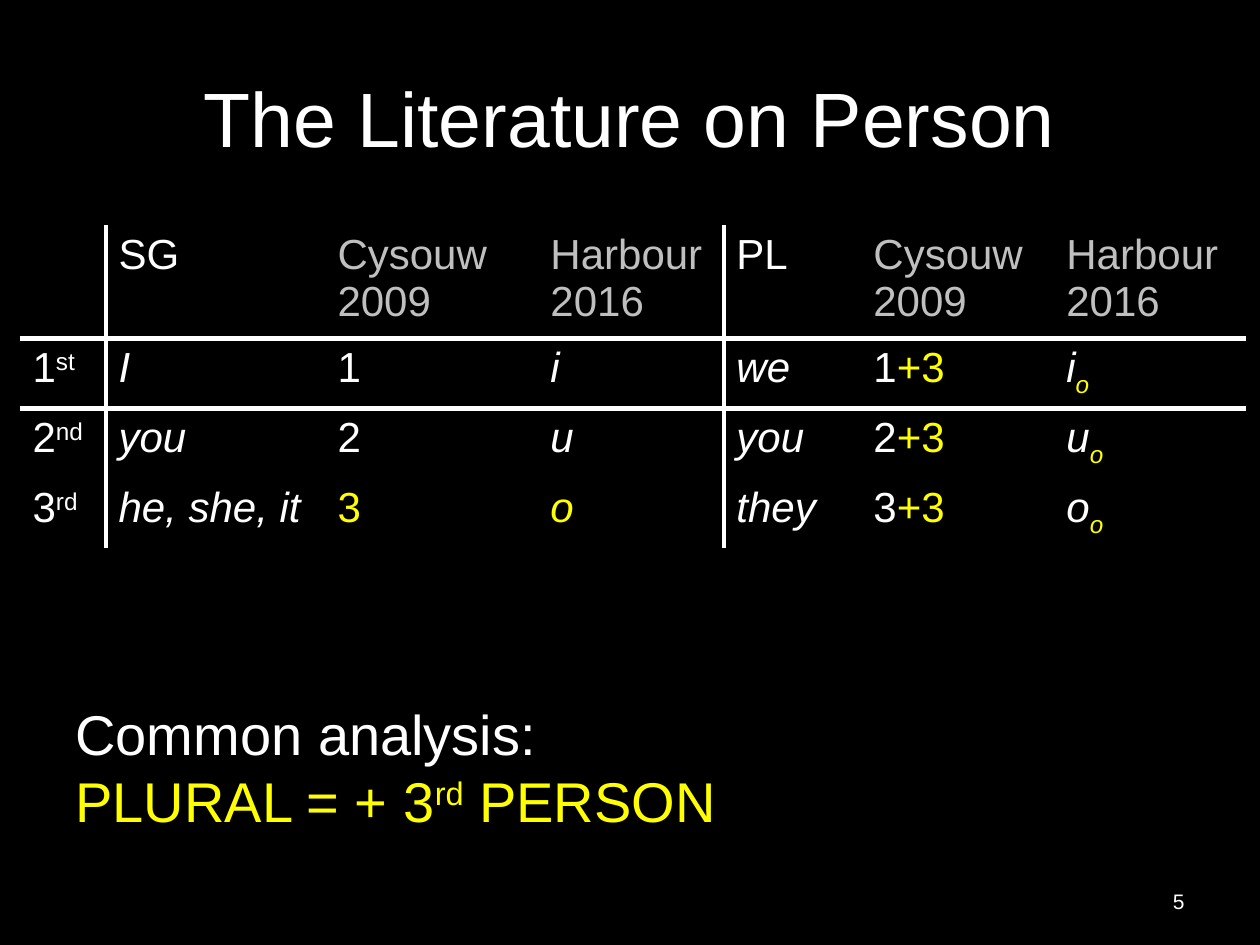
"""Build a slide that compares two analyses of grammatical person."""
from lxml import etree
from pptx import Presentation
from pptx.dml.color import RGBColor
from pptx.enum.text import MSO_ANCHOR, PP_ALIGN
from pptx.oxml.ns import qn
from pptx.util import Pt

PX = 914400 // 126
MIDDLE, TOP = MSO_ANCHOR.MIDDLE, MSO_ANCHOR.TOP
LEFT, MID, RIGHT = PP_ALIGN.LEFT, PP_ALIGN.CENTER, PP_ALIGN.RIGHT
BLACK = RGBColor(0x00, 0x00, 0x00)
WHITE = RGBColor(0xFF, 0xFF, 0xFF)
GREY = RGBColor(0xBF, 0xBF, 0xBF)
YELLOW = RGBColor(0xFF, 0xFF, 0x00)

STYLES = {
    "plain": (WHITE, False, 0),
    "super": (WHITE, False, 30000),
    "word": (WHITE, True, 0),
    "cite": (GREY, False, 0),
    "key": (YELLOW, False, 0),
    "key super": (YELLOW, False, 30000),
    "key word": (YELLOW, True, 0),
    "key sub": (YELLOW, True, -25000),
}

TEXTS = [
    ((63, 38, 1134, 158), 44, MID, MIDDLE, 0, [("The Literature on Person", "plain")]),
    ((63, 693, 1134, 163), 32, LEFT, TOP, 4, [
        ("Common analysis: \v", "plain"), ("PLURAL = + 3", "key"),
        ("rd", "key super"), (" PERSON", "key")]),
    ((903, 876, 294, 50), 12, RIGHT, MIDDLE, 0, [("5", "plain")]),
]

CITES = [[("Cysouw 2009", "cite")], [("Harbour 2016", "cite")]]
HEAD = [[], [("SG", "plain")], *CITES, [("PL", "plain")], *CITES]
PERSONS = [
    ("1", "st", "I", "i", "we", ""),
    ("2", "nd", "you", "u", "you", ""),
    ("3", "rd", "he, she, it", "o", "they", "key "),
]
ORIGIN = (20, 225)
COLS = [86, 219, 213, 186, 137, 193, 192]
ROWS = [106, 66, 66, 67]
RULED_COLS = {0, 3}
RULED_ROWS = {0, 1}


def person_row(num, end, one, sign, many, key):
    return [
        [(num, "plain"), (end, "super")],
        [(one, "word")],
        [(num, key + "plain" if not key else "key")],
        [(sign, key + "word")],
        [(many, "word")],
        [(num, "plain"), ("+3", "key")],
        [(sign, "word"), ("o", "key sub")],
    ]


def write(para, runs, size):
    for text, style in runs:
        color, slant, shift = STYLES[style]
        body, *rest = text.split("\v")
        run = para.add_run()
        run.text = body
        form = {"name": "Arial", "size": Pt(size), "italic": slant}
        for name, value in form.items():
            setattr(run.font, name, value)
        run.font.color.rgb = color
        if shift:
            run._r.get_or_add_rPr().set("baseline", str(shift))
        if rest:
            para.add_line_break()


def add_text(slide, area, size, align, anchor, space, runs):
    frame = slide.shapes.add_textbox(*(n * PX for n in area)).text_frame
    for name, value in {"word_wrap": True, "vertical_anchor": anchor}.items():
        setattr(frame, name, value)
    para = frame.paragraphs[0]
    for name, value in {"alignment": align, "space_before": Pt(space)}.items():
        setattr(para, name, value)
    write(para, runs, size)


def set_edges(cell, row, col):
    sides = {
        "L": col - 1 in RULED_COLS,
        "R": col in RULED_COLS,
        "T": row - 1 in RULED_ROWS,
        "B": row in RULED_ROWS,
    }
    props = cell._tc.get_or_add_tcPr()
    for place, (side, ruled) in enumerate(sides.items()):
        line = etree.Element(qn("a:ln" + side), w=str(Pt(3)))
        if ruled:
            fill = etree.SubElement(line, qn("a:solidFill"))
            etree.SubElement(fill, qn("a:srgbClr"), val=str(WHITE))
        else:
            etree.SubElement(line, qn("a:noFill"))
        props.insert(place, line)


def add_grid(slide, cells):
    area = (*ORIGIN, sum(COLS), sum(ROWS))
    table = slide.shapes.add_table(
        len(ROWS), len(COLS), *(n * PX for n in area)).table
    for name in ("first_row", "horz_banding"):
        setattr(table, name, False)
    for col, width in zip(table.columns, COLS):
        col.width = width * PX
    for row, height in zip(table.rows, ROWS):
        row.height = height * PX
    for r, line in enumerate(cells):
        for c, runs in enumerate(line):
            cell = table.cell(r, c)
            cell.fill.background()
            write(cell.text_frame.paragraphs[0], runs, 24)
            set_edges(cell, r, c)


def main():
    deck = Presentation()
    deck.slide_width, deck.slide_height = 1260 * PX, 945 * PX
    slide = deck.slides.add_slide(deck.slide_layouts[6])
    back = slide.background.fill
    back.solid()
    back.fore_color.rgb = BLACK
    for item in TEXTS:
        add_text(slide, *item)
    add_grid(slide, [HEAD] + [person_row(*p) for p in PERSONS])
    deck.save("out.pptx")


if __name__ == "__main__":
    main()
